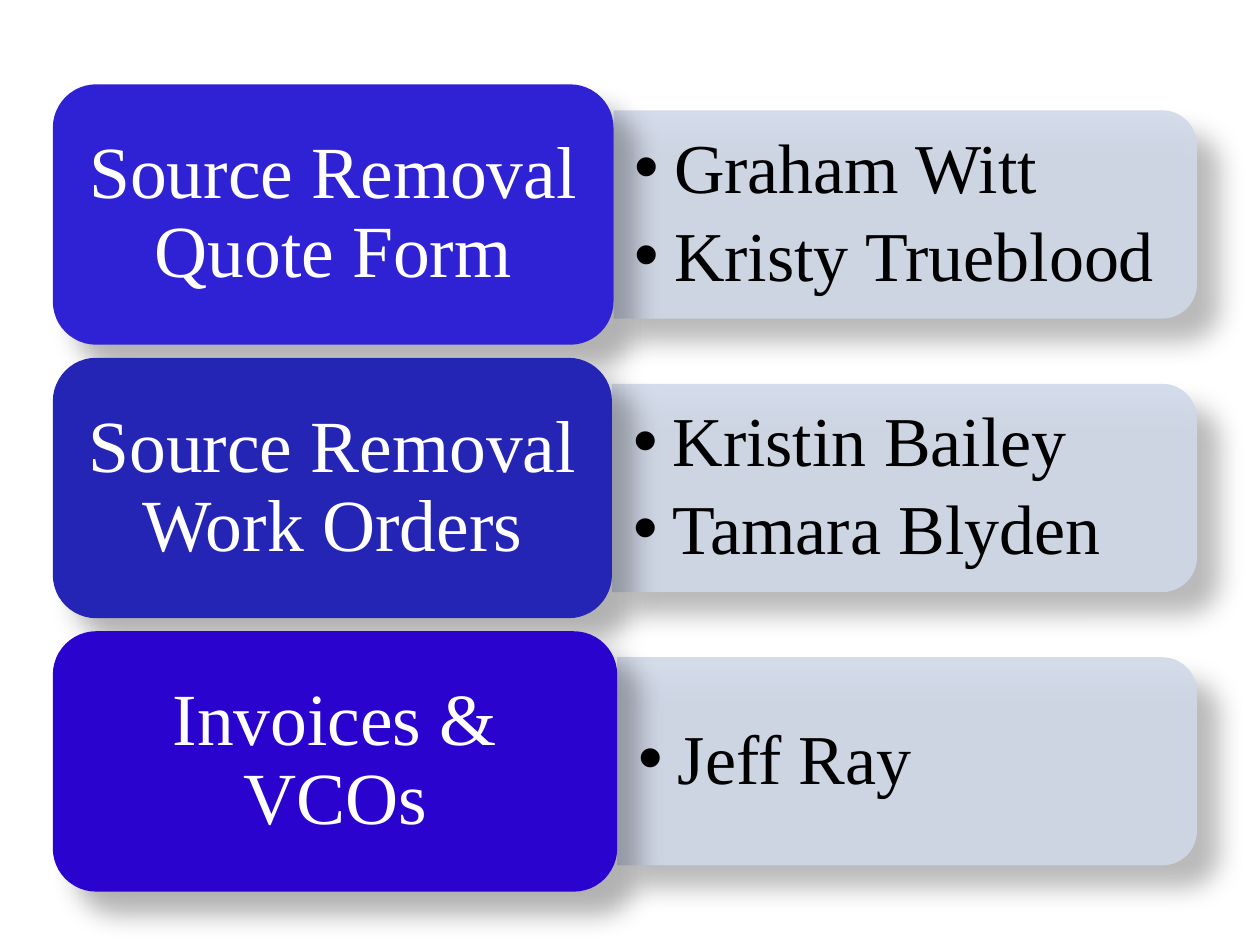
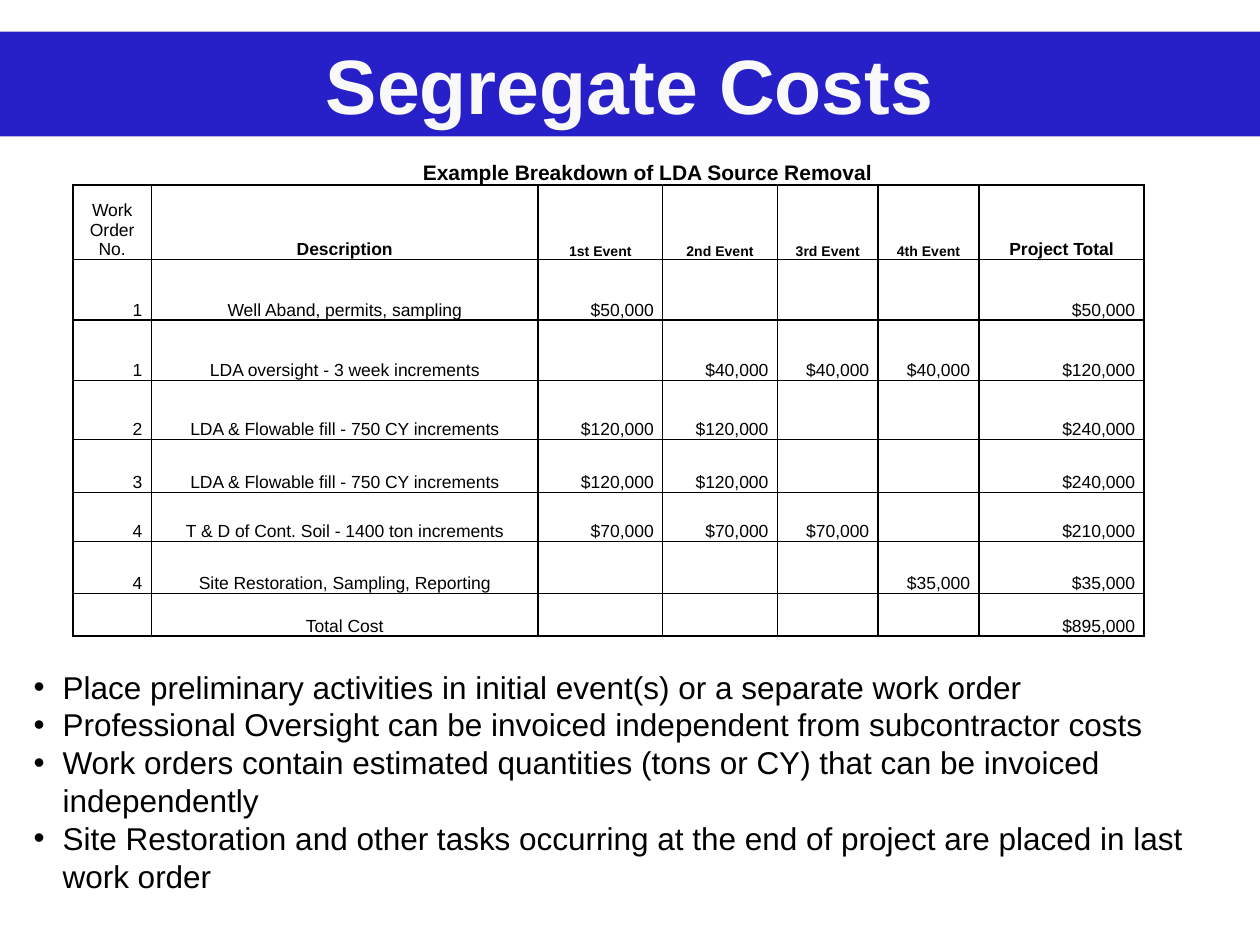
from lxml.etree import SubElement
from pptx import Presentation
from pptx.dml.color import RGBColor
from pptx.enum.shapes import MSO_SHAPE as Shape
from pptx.enum.text import MSO_ANCHOR as Anchor, MSO_AUTO_SIZE as AutoSize, PP_ALIGN as Align
from pptx.oxml.ns import qn
from pptx.util import Pt

COLOURS = {
    "black": "000000", "white": "FFFFFF", "title": "F9F9F9", "band": "271FC7",
    "tab": "D0D8E8", "quote": "2F22D4", "orders": "2525B5", "invoices": "2A03CF",
}
SERIF, SANS = "Times New Roman", "Arial"
CONTACTS = [
    ("Source Removal Quote Form", "quote", 320.4, ["Graham Witt", "Kristy Trueblood"]),
    ("Source Removal Work Orders", "orders", 319.5, ["Kristin Bailey", "Tamara Blyden"]),
    ("Invoices & VCOs", "invoices", 322.5, ["Jeff Ray"]),
]
COSTS_CAPTION = "Example Breakdown of LDA Source Removal"
COSTS_HEADER = ["Work Order No.", "Description", "1st Event", "2nd Event",
                "3rd Event", "4th Event", "Project Total"]
COSTS = [
    ["1", "Well Aband, permits, sampling", "$50,000", "", "", "", "$50,000"],
    ["1", "LDA oversight - 3 week increments", "", "$40,000", "$40,000", "$40,000", "$120,000"],
    ["2", "LDA & Flowable fill - 750 CY increments", "$120,000", "$120,000", "", "", "$240,000"],
    ["3", "LDA & Flowable fill - 750 CY increments", "$120,000", "$120,000", "", "", "$240,000"],
    ["4", "T & D of Cont. Soil - 1400 ton increments", "$70,000", "$70,000", "$70,000", "", "$210,000"],
    ["4", "Site Restoration, Sampling, Reporting", "", "", "", "$35,000", "$35,000"],
    ["", "Total Cost", "", "", "", "", "$895,000"],
]
COLUMN_WIDTHS = [44.64, 221.04, 71.28, 65.52, 57.6, 57.6, 94.32]
ROW_HEIGHTS = [15.84, 42.6, 34.5, 34.5, 33.8, 30.2, 28.2, 29.5, 24.5]
ADVICE = [
    "Place preliminary activities in initial event(s) or a separate work order",
    "Professional Oversight can be invoiced independent from subcontractor costs",
    "Work orders contain estimated quantities (tons or CY) that can be invoiced independently",
    "Site Restoration and other tasks occurring at the end of project are placed in last work order",
]


def colour(name):
    return RGBColor.from_string(COLOURS[name])


def add_span(para, text, size, font, ink="black", bold=False):
    span = para.add_run()
    span.text = text
    span.font.size, span.font.name, span.font.bold = Pt(size), font, bold
    span.font.color.rgb = colour(ink)


def set_insets(target, side, top):
    target.margin_left = target.margin_right = Pt(side)
    target.margin_top = target.margin_bottom = Pt(top)


def add_bullets(page, frame_box, items, size, font, indent, insets=(7.2, 3.6),
                anchor=Anchor.TOP, line_spacing=1, gap=0):
    frame = page.shapes.add_textbox(*map(Pt, frame_box)).text_frame
    frame.word_wrap, frame.vertical_anchor = True, anchor
    set_insets(frame, *insets)
    for index, item in enumerate(items):
        para = frame.add_paragraph() if index else frame.paragraphs[0]
        properties = para._p.get_or_add_pPr()
        properties.set("marL", str(Pt(indent)))
        properties.set("indent", str(-Pt(indent)))
        SubElement(properties, qn("a:buFont"), typeface="Arial")
        SubElement(properties, qn("a:buChar"), char="•")
        para.line_spacing = line_spacing
        if index:
            para.space_before = Pt(gap)
        add_span(para, item, size, font)


def add_shadow(shape):
    effects = SubElement(shape._element.spPr, qn("a:effectLst"))
    shadow = SubElement(effects, qn("a:outerShdw"), blurRad=str(Pt(15)), dist=str(Pt(18)),
                        dir="2700000", algn="tl", rotWithShape="0")
    ink = SubElement(shadow, qn("a:srgbClr"), val=COLOURS["black"])
    SubElement(ink, qn("a:alpha"), val="30000")


def add_panel(page, kind, frame_box, fill):
    shape = page.shapes.add_shape(kind, *map(Pt, frame_box))
    shape.fill.solid()
    shape.fill.fore_color.rgb = colour(fill)
    shape.line.fill.background()
    add_shadow(shape)
    return shape


def add_tab(page, left, middle, width, height):
    frame_box = (left + (width - height) / 2, middle - width / 2, height, width)
    tab = add_panel(page, Shape.ROUND_2_SAME_RECTANGLE, frame_box, "tab")
    tab.rotation = 90
    ink = tab._element.spPr.find(qn("a:solidFill")).find(qn("a:srgbClr"))
    SubElement(ink, qn("a:alpha"), val="90000")


def add_label(page, frame_box, text, fill):
    label = add_panel(page, Shape.ROUNDED_RECTANGLE, frame_box, fill)
    frame = label.text_frame
    frame.word_wrap, frame.vertical_anchor = True, Anchor.MIDDLE
    set_insets(frame, 12.2, 6.3)
    para = frame.paragraphs[0]
    para.alignment, para.line_spacing = Align.CENTER, 0.9
    add_span(para, text, 42, SERIF, "white")


def add_contact_row(page, top, title, fill, width, names):
    left, right, height = 30.2, 684, 148.8
    middle, tab_left = top + height / 2, left + width
    add_tab(page, tab_left, middle, right - tab_left, 119)
    add_bullets(page, (tab_left, middle - 53.7, right - tab_left - 5.8, 107.4), names, 40, SERIF,
                22.5, (12.2, 6), Anchor.MIDDLE, 0.9, 7)
    add_label(page, (left, top, width, height), title, fill)


def add_title_band(page, text):
    title = page.shapes.title
    title.left, title.top, title.width, title.height = map(Pt, (0, 18, 720, 60))
    title.fill.solid()
    title.fill.fore_color.rgb = colour("band")
    frame = title.text_frame
    frame.auto_size, frame.vertical_anchor = AutoSize.NONE, Anchor.MIDDLE
    para = frame.paragraphs[0]
    para.alignment = Align.CENTER
    add_span(para, text, 44, SANS, "title", True)


def add_borders(cell, sides):
    properties = cell._tc.get_or_add_tcPr()
    for side in sides:
        line = SubElement(properties, qn(f"a:ln{side}"), w=str(Pt(1)))
        fill = SubElement(line, qn("a:solidFill"))
        SubElement(fill, qn("a:srgbClr"), val=COLOURS["black"])


def fill_cell(cell, text, size, align, bold=False, sides="LRTB"):
    add_borders(cell, sides)
    cell.fill.background()
    cell.vertical_anchor = Anchor.BOTTOM
    set_insets(cell, 5.2, 0)
    para = cell.text_frame.paragraphs[0]
    para.alignment = align
    if text:
        add_span(para, text, size, SANS, bold=bold)
    else:
        SubElement(para._p, qn("a:endParaRPr"), sz=str(size * 100))


def add_cost_table(page):
    frame_box = (41.8, 90, sum(COLUMN_WIDTHS), sum(ROW_HEIGHTS))
    table = page.shapes.add_table(len(ROW_HEIGHTS), len(COLUMN_WIDTHS), *map(Pt, frame_box)).table
    table.first_row = table.horz_banding = False
    for column, width in zip(table.columns, COLUMN_WIDTHS):
        column.width = Pt(width)
    for row, height in zip(table.rows, ROW_HEIGHTS):
        row.height = Pt(height)
    table.cell(0, 1).merge(table.cell(0, 6))
    for column, heading in enumerate(COSTS_HEADER):
        caption = COSTS_CAPTION if column == 1 else ""
        fill_cell(table.cell(0, column), caption, 12, Align.CENTER, True, "B")
        size = 8 if heading.endswith("Event") else 10
        fill_cell(table.cell(1, column), heading, size, Align.CENTER, column > 0)
    for row, values in enumerate(COSTS, 2):
        for column, value in enumerate(values):
            align = Align.CENTER if column == 1 else Align.RIGHT
            fill_cell(table.cell(row, column), value, 10, align)


def build_contacts(deck):
    page = deck.slides.add_slide(deck.slide_layouts[6])
    for index, contact in enumerate(CONTACTS):
        add_contact_row(page, 48.2 + 156.25 * index, *contact)


def build_costs(deck):
    page = deck.slides.add_slide(deck.slide_layouts[5])
    add_title_band(page, "Segregate Costs")
    add_cost_table(page)
    add_bullets(page, (12.2, 378, 707.8, 138), ADVICE, 18, SANS, 16.5)


def main():
    """Build the contacts slide and the cost breakdown slide."""
    deck = Presentation()
    deck.slide_width, deck.slide_height = Pt(720), Pt(540)
    build_contacts(deck)
    build_costs(deck)
    deck.save("out.pptx")


if __name__ == "__main__":
    main()
